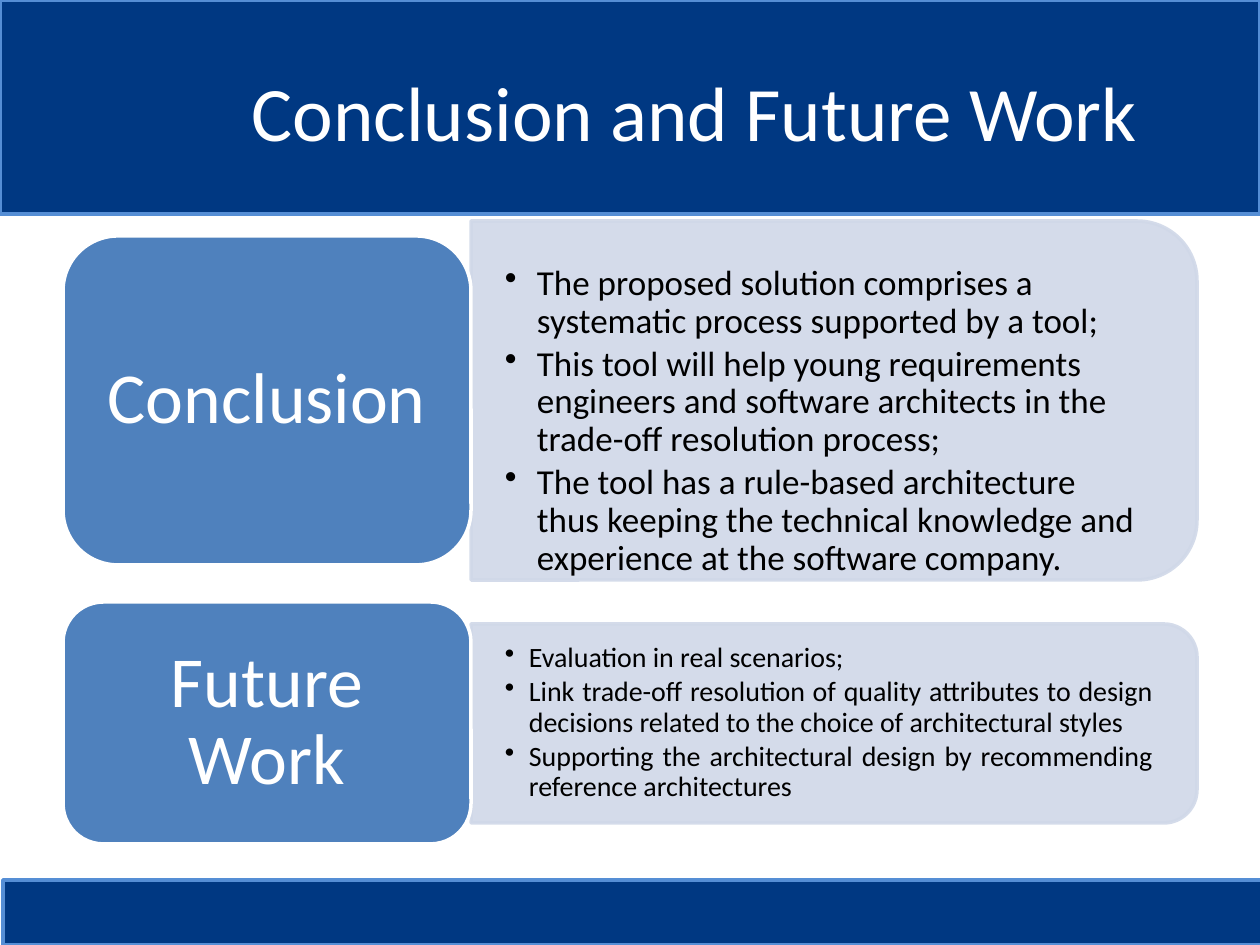
import pptx
import pptx.dml.color
import pptx.enum.shapes
import pptx.enum.text
import pptx.oxml
import pptx.oxml.ns
import pptx.util

EMU_PER_PX = 914400 / 126
NAVY, SKY, BLUE, PALE = "003882", "558ED5", "4F81BD", "D0D8E8"
WHITE, BLACK = "FFFFFF", "000000"
SHAPES = pptx.enum.shapes.MSO_SHAPE
ALIGN = pptx.enum.text.PP_ALIGN

CONCLUSIONS = [
    ("The proposed solution comprises a systematic process supported by a tool;", ALIGN.LEFT),
    ("This tool will help young requirements engineers and software architects "
     "in the trade-off resolution process;", ALIGN.LEFT),
    ("The tool has a rule-based architecture thus keeping the technical knowledge "
     "and experience at the software company.", ALIGN.LEFT),
]
FUTURE_WORK = [
    ("Evaluation in real scenarios;", ALIGN.LEFT),
    ("Link trade-off resolution of quality attributes to design decisions related "
     "to the choice of architectural styles", ALIGN.JUSTIFY),
    ("Supporting the architectural design by recommending reference architectures",
     ALIGN.JUSTIFY),
]


def px(length):
    return pptx.util.Emu(round(length * EMU_PER_PX))


def rgb(value):
    return pptx.dml.color.RGBColor.from_string(value)


def add_shape(slide, kind, box, fill, line):
    shape = slide.shapes.add_shape(kind, *map(px, box))
    shape.shadow.inherit = False
    shape.fill.solid()
    shape.fill.fore_color.rgb = rgb(fill)
    shape.line.color.rgb = rgb(line)
    shape.line.width = pptx.util.Pt(2)
    return shape


def set_opacity(shape, percent):
    """Apply one opacity to both the fill and the outline."""
    for color in shape._element.spPr.iter(pptx.oxml.ns.qn("a:srgbClr")):
        alpha = pptx.oxml.parse_xml(f'<a:alpha {pptx.oxml.ns.nsdecls("a")}/>')
        alpha.set("val", str(percent * 1000))
        color.append(alpha)


def add_bullet(paragraph, indent):
    properties = paragraph._p.get_or_add_pPr()
    properties.set("marL", str(px(indent)))
    properties.set("indent", str(-px(indent)))
    properties.append(pptx.oxml.parse_xml(
        f'<a:buChar {pptx.oxml.ns.nsdecls("a")} char="•"/>'))


def write_text(shape, items, size, color, insets=(13, 6, 13, 6), spacing=1.0,
               space_after=0, indent=0):
    """Fill a shape with (text, alignment) items, bulleted when indent is given."""
    frame = shape.text_frame
    frame.word_wrap = True
    frame.vertical_anchor = pptx.enum.text.MSO_ANCHOR.MIDDLE
    (frame.margin_left, frame.margin_top,
     frame.margin_right, frame.margin_bottom) = map(px, insets)
    for index, (text, alignment) in enumerate(items):
        paragraph = frame.add_paragraph() if index else frame.paragraphs[0]
        if indent:
            paragraph.level = 1
            add_bullet(paragraph, indent)
        paragraph.alignment = alignment
        paragraph.line_spacing = spacing
        paragraph.space_after = pptx.util.Pt(space_after)
        run = paragraph.add_run()
        run.text = text
        run.font.name = "Calibri"
        run.font.size = pptx.util.Pt(size)
        run.font.color.rgb = rgb(color)


def add_label(slide, text, box):
    label = add_shape(slide, SHAPES.ROUNDED_RECTANGLE, box, BLUE, WHITE)
    write_text(label, [(text, ALIGN.CENTER)], 41, WHITE,
               insets=(21, 11, 21, 11), spacing=0.9)


def add_panel(slide, box):
    """Draw a panel rounded on its right side, by turning one rounded on top."""
    left, top, width, height = box
    shift = (width - height) / 2
    panel = add_shape(slide, SHAPES.ROUND_2_SAME_RECTANGLE,
                      (left + shift, top - shift, height, width), PALE, PALE)
    panel.rotation = 90
    set_opacity(panel, 90)


def add_text_box(slide, box, items, size, color, **text_format):
    text_box = slide.shapes.add_textbox(*map(px, box))
    write_text(text_box, items, size, color, **text_format)


def main():
    presentation = pptx.Presentation()
    presentation.slide_width, presentation.slide_height = px(1260), px(945)
    slide = presentation.slides.add_slide(presentation.slide_layouts[6])

    add_shape(slide, SHAPES.RECTANGLE, (0, 0, 1260, 214), NAVY, SKY)
    add_shape(slide, SHAPES.RECTANGLE, (3, 880, 1260, 65), NAVY, SKY)
    add_text_box(slide, (194, 32, 1002, 157),
                 [("Conclusion and Future Work", ALIGN.CENTER)], 44, WHITE)

    add_panel(slide, (471, 221, 726, 359))
    add_text_box(slide, (471, 238, 708, 324), CONCLUSIONS, 20, BLACK,
                 insets=(34, 61, 34, 18), spacing=0.9, space_after=3, indent=32)
    add_label(slide, "Conclusion", (63, 236, 408, 329))

    add_panel(slide, (471, 624, 726, 199))
    add_text_box(slide, (471, 633, 716, 180), FUTURE_WORK, 16, BLACK,
                 insets=(34, 18, 34, 18), spacing=0.9, space_after=2.4, indent=24)
    add_label(slide, "Future Work", (63, 602, 408, 242))

    presentation.save("out.pptx")


if __name__ == "__main__":
    main()
